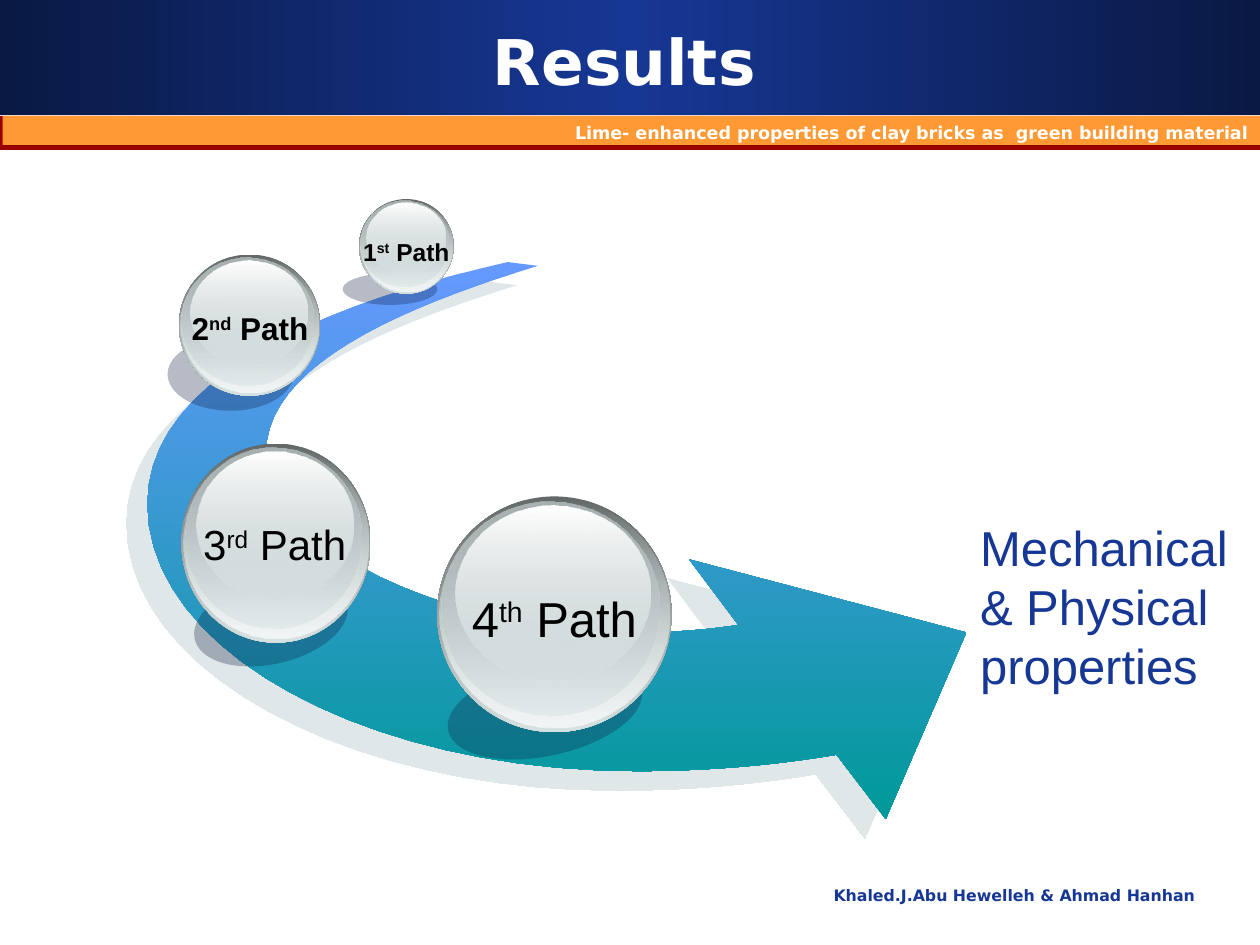
from collections import namedtuple

from lxml import etree
from pptx import Presentation
from pptx.dml.color import RGBColor
from pptx.enum.shapes import MSO_SHAPE as SHAPE
from pptx.enum.text import MSO_ANCHOR as ANCHOR, PP_ALIGN as ALIGN
from pptx.oxml.ns import qn
from pptx.util import Inches, Pt

NAVY = RGBColor(0x16, 0x37, 0x94)
DARK_NAVY = RGBColor(0x0F, 0x21, 0x45)
RED = RGBColor(0x99, 0x00, 0x00)
ORANGE = RGBColor(0xFF, 0x99, 0x33)
BLUE = RGBColor(0x66, 0x99, 0xFF)
TEAL = RGBColor(0x00, 0x99, 0x99)
SILVER = RGBColor(0xD6, 0xE1, 0xE2)
PALE = RGBColor(0xF2, 0xF5, 0xF5)
SHADOW = RGBColor(0xC1, 0xD1, 0xD3)
WHITE = RGBColor(0xFF, 0xFF, 0xFF)
BLACK = RGBColor(0x00, 0x00, 0x00)

# Colour modifiers in percent; None marks one without a value
PLAIN = {}
DARK = {"gamma": None, "shade": 46.28, "invGamma": None}
DIM = {"gamma": None, "shade": 79.22, "invGamma": None}


def paint(sp, *stops, angle=90):
    """Fill with one (colour, modifiers) stop, or an evenly spaced gradient of several."""
    sp.shadow.inherit = False
    sp.line.fill.background()
    sp.fill.solid()
    sp.fill.fore_color.rgb = stops[0][0]
    solid = sp._element.spPr.find(qn("a:solidFill"))
    parents = [solid]
    if len(stops) > 1:
        fill = etree.Element(qn("a:gradFill"), rotWithShape="1")
        gs_list = etree.SubElement(fill, qn("a:gsLst"))
        parents = [etree.SubElement(gs_list, qn("a:gs"), pos=str(i * 100000 // (len(stops) - 1)))
                   for i in range(len(stops))]
        etree.SubElement(fill, qn("a:lin"), ang=str(angle * 60000), scaled="1")
        solid.getparent().replace(solid, fill)
    else:
        solid.remove(solid[0])
    for parent, (color, mods) in zip(parents, stops):
        clr = etree.SubElement(parent, qn("a:srgbClr"), val=str(color))
        for name, percent in mods.items():
            mod = etree.SubElement(clr, qn("a:" + name))
            if percent is not None:
                mod.set("val", str(round(percent * 1000)))


def write(sp, runs, size, color, align, font="DejaVu Sans", bold=True,
          wrap=True, anchor=ANCHOR.TOP):
    """Write the runs as one paragraph; a run starting with ^ is superscript."""
    tf = sp.text_frame
    tf.word_wrap = wrap
    tf.vertical_anchor = anchor
    p = tf.paragraphs[0]
    p.alignment = align
    for text in runs:
        r = p.add_run()
        r.text = text.lstrip("^")
        r.font.size, r.font.name, r.font.bold = Pt(size), font, bold
        r.font.color.rgb = color
        if text.startswith("^"):
            r.font._element.set("baseline", "30000")


prs = Presentation()
prs.slide_width, prs.slide_height = Inches(10), Inches(7.5)
s = prs.slides.add_slide(prs.slide_layouts[6])

# Header bands
header = s.shapes.add_shape(SHAPE.RECTANGLE, 0, 0, Inches(10), Inches(0.91))
paint(header, (NAVY, DARK), (NAVY, PLAIN), (NAVY, DARK), angle=0)
edge = s.shapes.add_shape(SHAPE.RECTANGLE, 0, Inches(0.92), Inches(10), Inches(0.27))
paint(edge, (RED, PLAIN))

# Footer, subtitle band and title
footer = s.shapes.add_textbox(Inches(5.31), Inches(6.98), Inches(4.27), Inches(0.44))
write(footer, ["Khaled.J.Abu Hewelleh & Ahmad Hanhan"], 9, NAVY, ALIGN.RIGHT)
band = s.shapes.add_shape(SHAPE.RECTANGLE, Inches(0.02), Inches(0.92),
                          Inches(9.98), Inches(0.23))
paint(band, (ORANGE, PLAIN))
write(band, ["Lime- enhanced properties of clay bricks as  green building material"],
      10, WHITE, ALIGN.RIGHT)
title = s.shapes.add_textbox(Inches(0.33), Inches(0.17), Inches(9.25), Inches(0.62))
write(title, ["Results"], 36, WHITE, ALIGN.CENTER, anchor=ANCHOR.MIDDLE)

# Curved arrow: two swept edges of cubic Bezier curves, joined by the head.
# Each curve is (start, control, control, end).
TAIL_OUT, LEFT_OUT, BOTTOM_OUT, NECK_OUT = (4.03, 2.08), (1.17, 4), (5.05, 6.12), (6.64, 5.99)
TAIL_IN, LEFT_IN, BOTTOM_IN, NECK_IN = (4.27, 2.11), (2.11, 3.6), (5.05, 5.02), (5.86, 4.96)
HEAD = [(7.03, 6.5), (7.67, 5.02), (5.47, 4.44)]
OUTER_CURVES = [
    (TAIL_OUT, (2.67, 2.39), (1.17, 2.96), LEFT_OUT),
    (LEFT_OUT, (1.17, 5.17), (2.91, 6.12), BOTTOM_OUT),
    (BOTTOM_OUT, (5.58, 6.12), (6.11, 6.08), NECK_OUT),
]
INNER_CURVES = [
    (NECK_IN, (5.6, 5), (5.33, 5.02), BOTTOM_IN),
    (BOTTOM_IN, (3.55, 5.02), (2.11, 4.32), LEFT_IN),
    (LEFT_IN, (2.11, 2.91), (3.15, 2.45), TAIL_IN),
]
STEPS = 20
BEZIER_WEIGHTS = [((1 - t) ** 3, 3 * t * (1 - t) ** 2, 3 * t ** 2 * (1 - t), t ** 3)
                  for t in (i / STEPS for i in range(STEPS + 1))]
outer, inner = [
    [tuple(sum(w * c for w, c in zip(weights, axis)) for axis in zip(*curve))
     for curve in curves for weights in BEZIER_WEIGHTS]
    for curves in (OUTER_CURVES, INNER_CURVES)]
points = [(Inches(x), Inches(y)) for x, y in outer + HEAD + inner]
builder = s.shapes.build_freeform(*points[0])
builder.add_line_segments(points[1:], close=True)
arrow = builder.convert_to_shape()
paint(arrow, (BLUE, PLAIN), (TEAL, PLAIN))

# Arrow shadow
effects = arrow._element.spPr.find(qn("a:effectLst"))
shadow = etree.SubElement(effects, qn("a:outerShdw"), dist=str(Pt(16.3)),
                          dir=str(137 * 60000), algn="ctr", rotWithShape="0")
clr = etree.SubElement(shadow, qn("a:srgbClr"), val=str(SHADOW))
etree.SubElement(clr, qn("a:alpha"), val="50000")

# Outcome at the arrow head
outcome = s.shapes.add_textbox(Inches(7.68), Inches(4.06), Inches(2.32), Inches(1.51))
write(outcome, ["Mechanical & Physical properties"], 28, NAVY, ALIGN.LEFT,
      font="Arial", bold=False)

# Glass layers: box as fractions of the ball (left, top, width, height), top and bottom stop
Layer = namedtuple("Layer", "box top bottom")
LAYERS = [
    Layer((0, 0, 1, 1), (SILVER, DARK), (SILVER, PLAIN)),
    Layer((0.01, 0.01, 0.98, 0.97), (SILVER, {"alpha": 0}), (PALE, PLAIN)),
    Layer((0.02, 0.02, 0.93, 0.91), (SILVER, DIM), (SILVER, {"alpha": 48})),
    Layer((0.08, 0.04, 0.83, 0.74), (WHITE, PLAIN), (SILVER, {"alpha": 38})),
]

# Balls along the arrow, nearest first; boxes are left, top, width, height
Ball = namedtuple("Ball", "number ordinal size bold box shadow tilt label")
BALLS = [
    Ball("4", "th", 28, False, box=(3.47, 3.94, 1.86, 1.87),
         shadow=(3.54, 5.27, 1.57, 0.73), tilt=-12.1, label=(3.62, 4.62, 1.56, 0.57)),
    Ball("3", "rd", 24, False, box=(1.44, 3.52, 1.5, 1.58),
         shadow=(1.53, 4.6, 1.24, 0.67), tilt=-12.9, label=(1.49, 4.07, 1.38, 0.5)),
    Ball("2", "nd", 18, True, box=(1.42, 2.02, 1.12, 1.12),
         shadow=(1.33, 2.68, 1, 0.58), tilt=0, label=(1.4, 2.4, 1.17, 0.4)),
    Ball("1", "st", 14, True, box=(2.85, 1.58, 0.75, 0.75),
         shadow=(2.72, 2.17, 0.75, 0.25), tilt=0, label=(2.77, 1.83, 0.91, 0.34)),
]
for ball in BALLS:
    group = s.shapes.add_group_shape()
    sp = group.shapes.add_shape(SHAPE.OVAL, *map(Inches, ball.shadow))
    sp.rotation = ball.tilt
    paint(sp, (DARK_NAVY, {"alpha": 30}))
    x, y, w, h = ball.box
    for layer in LAYERS:
        fx, fy, fw, fh = layer.box
        sp = group.shapes.add_shape(SHAPE.OVAL, Inches(x + fx * w), Inches(y + fy * h),
                                    Inches(fw * w), Inches(fh * h))
        paint(sp, layer.top, layer.bottom)
    sp = group.shapes.add_textbox(*map(Inches, ball.label))
    write(sp, [ball.number, "^" + ball.ordinal, " Path"], ball.size, BLACK,
          ALIGN.CENTER, font="Arial", bold=ball.bold, wrap=False)

prs.save("out.pptx")
